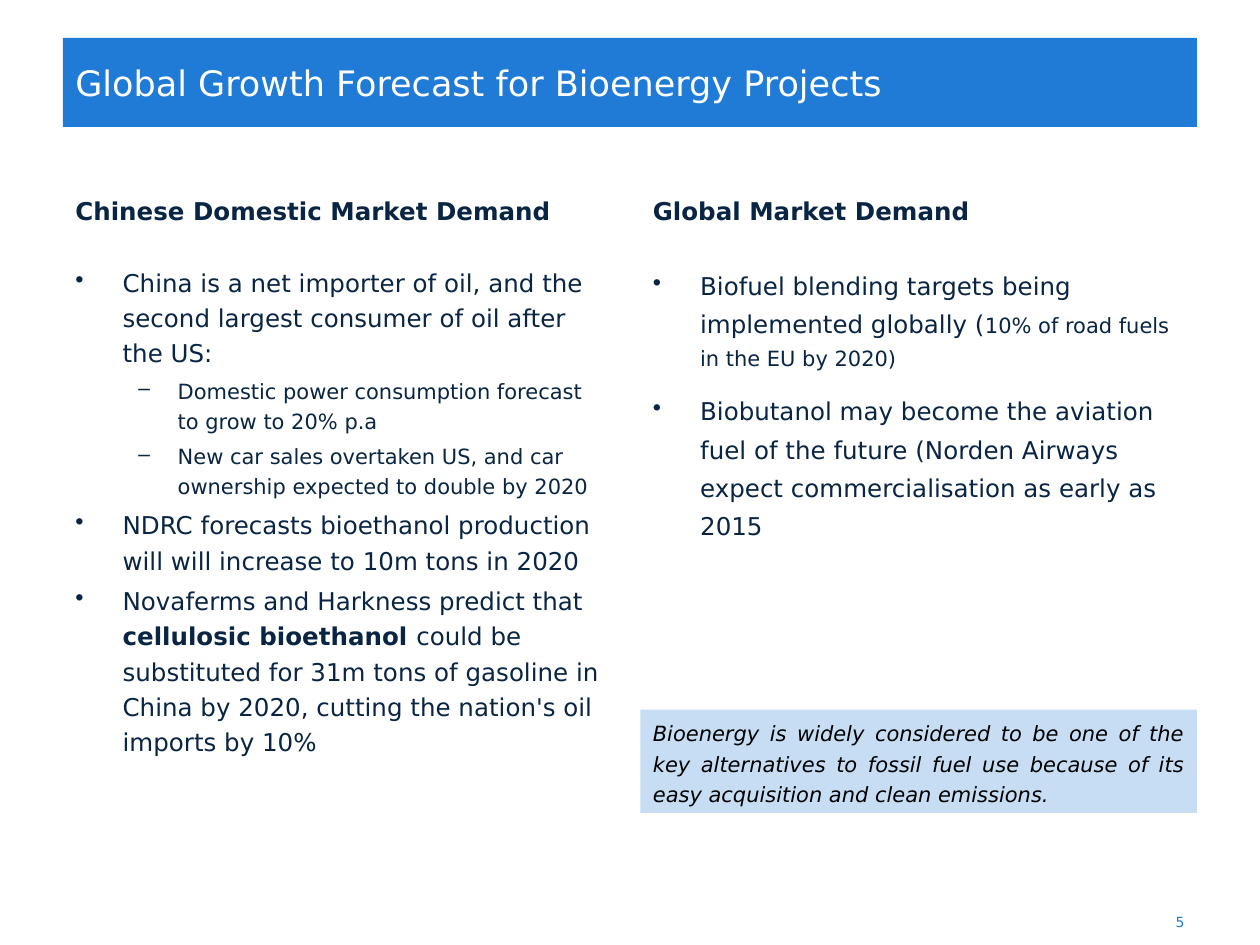
from lxml.etree import SubElement
from pptx import Presentation
from pptx.dml.color import RGBColor
from pptx.enum.shapes import MSO_SHAPE
from pptx.enum.text import MSO_ANCHOR, PP_ALIGN
from pptx.oxml.ns import qn
from pptx.util import Pt

COLORS = {"blue": "1F7BD6", "navy": "092543", "white": "FFFFFF", "black": "000000"}
FONT = "DejaVu Sans"
LEFT, RIGHT, COL_W = 36, 366, 318


def add_box(x, y, w, h, anchor=MSO_ANCHOR.TOP, fill=None):
    """Add a text box, or a rectangle when a fill is given."""
    if fill:
        sp = s.shapes.add_shape(MSO_SHAPE.RECTANGLE, Pt(x), Pt(y), Pt(w), Pt(h))
        sp.shadow.inherit = False
        sp.fill.solid()
        sp.fill.fore_color.rgb = RGBColor.from_string(COLORS[fill])
        sp.line.fill.background()
    else:
        sp = s.shapes.add_textbox(Pt(x), Pt(y), Pt(w), Pt(h))
    sp.text_frame.word_wrap = True
    sp.text_frame.vertical_anchor = anchor
    return sp


def add_run(p, text, size, color="navy", bold=False, italic=False):
    r = p.add_run()
    r.text = text
    r.font.name = FONT
    r.font.size = Pt(size)
    r.font.bold = bold
    r.font.italic = italic
    r.font.color.rgb = RGBColor.from_string(COLORS[color])


prs = Presentation()
prs.slide_width, prs.slide_height = Pt(720), Pt(540)
s = prs.slides.add_slide(prs.slide_layouts[6])

title = add_box(LEFT, 21.6, 648, 51, MSO_ANCHOR.MIDDLE, "blue")
p = title.text_frame.paragraphs[0]
p.alignment = PP_ALIGN.LEFT
add_run(p, "Global Growth Forecast for Bioenergy Projects", 20, "white")

# Column: left, heading, body height, line spacing, space before, bullets
# Bullet: level, runs of (text, size, bold)
columns = [
    (LEFT, "Chinese Domestic Market Demand", 343, 1.2, 3, [
        (0, [("China is a net importer of oil, and the second largest consumer "
              "of oil after the US:", 14, False)]),
        (1, [("Domestic power consumption forecast to grow to 20% p.a", 12, False)]),
        (1, [("New car sales overtaken US, and car ownership expected to double "
              "by 2020", 12, False)]),
        (0, [("NDRC forecasts bioethanol production will will increase to 10m "
              "tons in 2020", 14, False)]),
        (0, [("Novaferms and Harkness predict that ", 14, False),
             ("cellulosic bioethanol ", 14, True),
             ("could be substituted for 31m tons of gasoline in China by 2020, "
              "cutting the nation's oil imports by 10%", 14, False)]),
    ]),
    (RIGHT, "Global Market Demand", 238, 1.3, 9.4, [
        (0, [("Biofuel blending targets being implemented globally (", 14, False),
             ("10% of road fuels in the EU by 2020)", 12, False)]),
        (0, [("Biobutanol may become the aviation fuel of the future (Norden "
              "Airways expect commercialisation as early as 2015", 14, False)]),
    ]),
]
# Level: bullet character, left margin, hanging indent
bullet_styles = [("•", 27, 27), ("–", 58.5, 22.5)]

for x, heading, height, spacing, before, bullets in columns:
    tf = add_box(x, 82, COL_W, 50.5, MSO_ANCHOR.BOTTOM).text_frame
    add_run(tf.paragraphs[0], heading, 14, bold=True)

    tf = add_box(x, 146.2, COL_W, height).text_frame
    for i, (level, runs) in enumerate(bullets):
        p = tf.add_paragraph() if i else tf.paragraphs[0]
        char, margin, hanging = bullet_styles[level]
        pPr = p._p.get_or_add_pPr()
        pPr.set("marL", str(Pt(margin)))
        pPr.set("indent", str(-Pt(hanging)))
        SubElement(pPr, qn("a:buChar")).set("char", char)
        p.level = level
        p.line_spacing = spacing
        p.space_before = Pt(before if i else 0)
        for text, size, bold in runs:
            add_run(p, text, size, bold=bold)

callout = add_box(RIGHT, 405.5, COL_W, 59, fill="blue")
color = callout.fill._xPr.find(qn("a:solidFill"))[0]
SubElement(color, qn("a:alpha")).set("val", "25000")
p = callout.text_frame.paragraphs[0]
p.alignment = PP_ALIGN.JUSTIFY
p.line_spacing = 1.2
add_run(p, "Bioenergy is widely considered to be one of the key alternatives to fossil "
           "fuel use because of its easy acquisition and clean emissions.",
        12, "black", italic=True)

number = add_box(516, 514, 168, 26, MSO_ANCHOR.MIDDLE)
p = number.text_frame.paragraphs[0]
p.alignment = PP_ALIGN.RIGHT
add_run(p, "5", 8, "blue")

prs.save("out.pptx")
